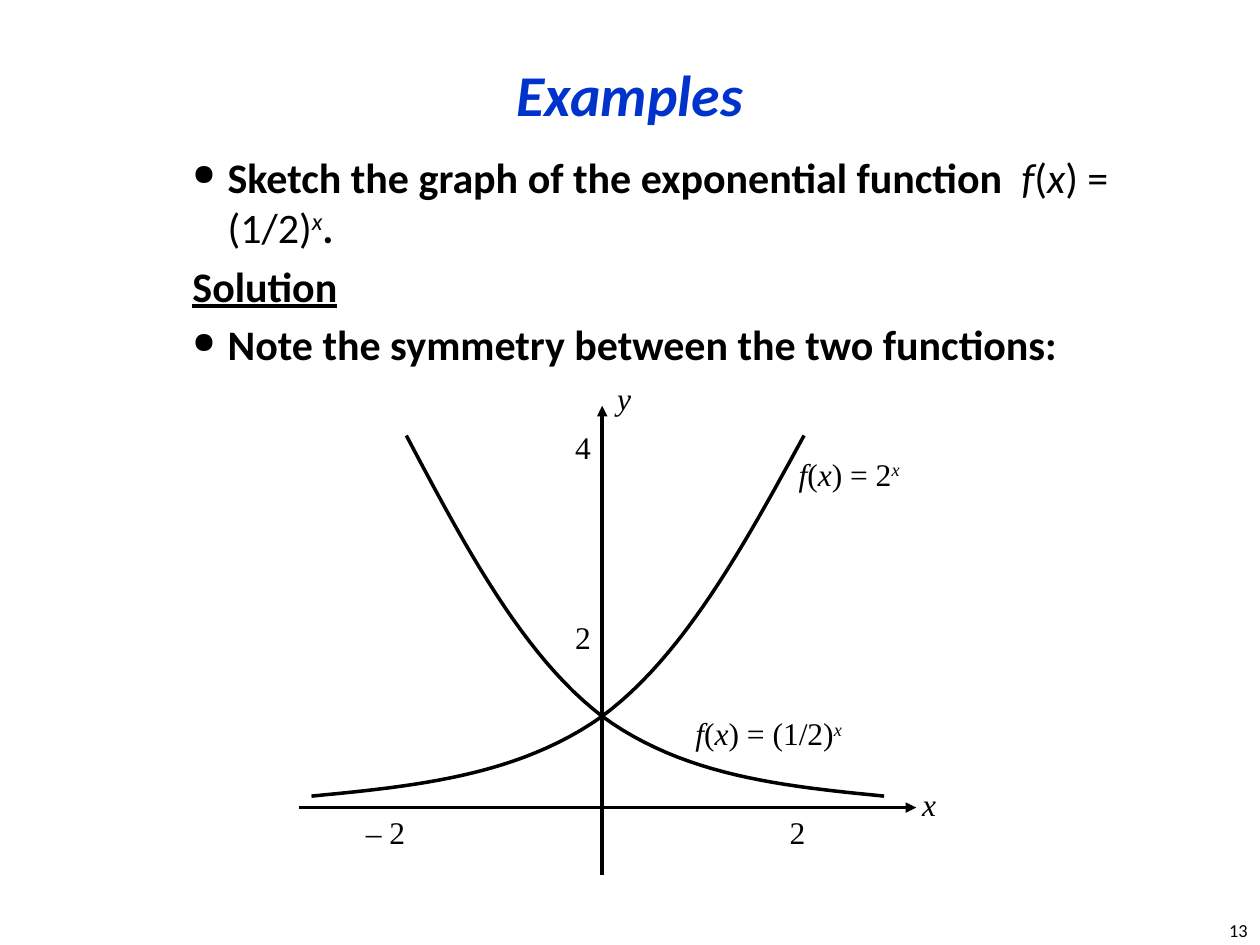
from dataclasses import dataclass

from lxml import etree
from pptx import Presentation
from pptx.dml.color import RGBColor
from pptx.enum.shapes import MSO_CONNECTOR
from pptx.enum.text import MSO_ANCHOR, MSO_AUTO_SIZE, PP_ALIGN
from pptx.oxml.ns import qn
from pptx.util import Cm, Pt

STRAIGHT = MSO_CONNECTOR.STRAIGHT
MIDDLE = MSO_ANCHOR.MIDDLE
GROW = MSO_AUTO_SIZE.SHAPE_TO_FIT_TEXT
LEFT, CENTER, RIGHT = PP_ALIGN.LEFT, PP_ALIGN.CENTER, PP_ALIGN.RIGHT


@dataclass(frozen=True)
class Theme:
    """Colours, fonts and sizes of the slide."""
    title_color: RGBColor = RGBColor(0x00, 0x33, 0xCC)
    ink: RGBColor = RGBColor(0, 0, 0)
    text_font: str = "Calibri"
    math_font: str = "Times New Roman"
    title_size: float = 33
    body_size: float = 24
    graph_size: float = 18
    number_size: float = 10.5
    stroke: float = 2


THEME = Theme()
FUNCTION_OF_X = [("f", "i"), ("(", ""), ("x", "i")]
HALF_POWER = FUNCTION_OF_X + [(") = (1/2)", ""), ("x", "i^")]
TWO_POWER = FUNCTION_OF_X + [(") = 2", ""), ("x", "i^")]
STATEMENTS = [
    ([("Sketch the graph of the exponential function  ", "b"), *HALF_POWER, (".", "b")], True),
    ([("Solution", "bu")], False),
    ([("Note the symmetry between the two functions:", "b")], True),
]
GROWTH_KNOTS = [(-5.86, 8.53), (-3.78, 8.33), (-1.7, 8.13), (0, 6.92),
                (1.64, 5.71), (2.86, 3.48), (4.07, 1.26)]
MIRROR = -0.97
CURVE_STEPS = 24


def style_font(font, name, size, color):
    """Set the family, size and colour of a font."""
    font.name, font.size = name, Pt(size)
    font.color.rgb = color


def write_runs(paragraph, pieces, name, size):
    """Fill a paragraph with runs marked b, i, u or ^ for superscript."""
    for text, marks in pieces:
        run = paragraph.add_run()
        run.text = text
        style_font(run.font, name, size, THEME.ink)
        run.font.bold, run.font.italic = "b" in marks, "i" in marks
        run.font.underline = "u" in marks
        if "^" in marks:
            run.font._element.set("baseline", "30000")


def add_frame(slide, left, top, width, height):
    """Add a wrapping text box and return its frame."""
    frame = slide.shapes.add_textbox(Cm(left), Cm(top), Cm(width), Cm(height)).text_frame
    frame.word_wrap = True
    return frame


def add_label(slide, left, top, width, pieces):
    """Add a one-line graph label and return its paragraph."""
    frame = add_frame(slide, left, top, width, 1.02)
    frame.auto_size = GROW
    write_runs(frame.paragraphs[0], pieces, THEME.math_font, THEME.graph_size)
    return frame.paragraphs[0]


def add_title(slide, left, top, width, height):
    """Place and format the title placeholder."""
    title = slide.shapes.title
    title.left, title.top, title.width, title.height = map(Cm, (left, top, width, height))
    frame = title.text_frame
    frame.text = "Examples"
    frame.vertical_anchor = MIDDLE
    heading = frame.paragraphs[0]
    heading.alignment = CENTER
    font = heading.runs[0].font
    style_font(font, THEME.text_font, THEME.title_size, THEME.title_color)
    font.bold = font.italic = True


def add_statements(slide, left, top, width, height):
    """Write the task, the solution heading and the note."""
    frame = add_frame(slide, left, top, width, height)
    for index, (pieces, bulleted) in enumerate(STATEMENTS):
        statement = frame.add_paragraph() if index else frame.paragraphs[0]
        properties = statement._p.get_or_add_pPr()
        properties.set("marL", str(Cm(0.71)))
        properties.set("indent", str(-Cm(0.71)))
        if bulleted:
            etree.SubElement(properties, qn("a:buSzPct"), val="70000")
            etree.SubElement(properties, qn("a:buChar"), char="●")
        else:
            etree.SubElement(properties, qn("a:buNone"))
        if index:
            statement.space_before = Pt(0.2 * THEME.body_size)
        write_runs(statement, pieces, THEME.text_font, THEME.body_size)


def add_axis(slide, start, end):
    """Draw an axis with an arrowhead at its end."""
    axis = slide.shapes.add_connector(STRAIGHT, *map(Cm, (*start, *end)))
    axis.line.color.rgb = THEME.ink
    axis.line.width = Pt(THEME.stroke)
    etree.SubElement(axis.line._get_or_add_ln(), qn("a:tailEnd"), type="triangle")
    etree.SubElement(axis._element.spPr, qn("a:effectLst"))


def bezier_point(knots, t):
    """Return the point at t on a cubic Bezier segment."""
    weights = ((1 - t) ** 3, 3 * t * (1 - t) ** 2, 3 * t * t * (1 - t), t ** 3)
    return tuple(sum(w * knot[i] for w, knot in zip(weights, knots)) for i in (0, 1))


def add_curve(slide, knots):
    """Draw a smooth open curve through chained Bezier segments."""
    points = [knots[0]] + [bezier_point(knots[first:first + 4], step / CURVE_STEPS)
                           for first in range(0, len(knots) - 1, 3)
                           for step in range(1, CURVE_STEPS + 1)]
    (start_x, start_y), *rest = [(Cm(x), Cm(y)) for x, y in points]
    builder = slide.shapes.build_freeform(start_x, start_y)
    builder.add_line_segments(rest, close=False)
    curve = builder.convert_to_shape()
    curve.shadow.inherit = False
    curve.fill.background()
    curve.line.color.rgb = THEME.ink
    curve.line.width = Pt(THEME.stroke)


def add_x_ticks(slide, left, top, width):
    """Write the horizontal tick values at centred tab stops."""
    ticks = add_label(slide, left, top, width, [])
    stops = etree.SubElement(ticks._p.get_or_add_pPr(), qn("a:tabLst"))
    for position in (1.04, 4.31):
        etree.SubElement(stops, qn("a:tab"), pos=str(Cm(position * 2.54)), algn="ctr")
    write_runs(ticks, [("\t– 2\t2", "")], THEME.math_font, THEME.graph_size)


def add_y_ticks(slide, left, top, width, height):
    """Write the vertical tick values, widely spaced."""
    frame = add_frame(slide, left, top, width, height)
    upper, lower = frame.paragraphs[0], frame.add_paragraph()
    for tick, value in ((upper, "4"), (lower, "2")):
        tick.alignment = RIGHT
        write_runs(tick, [(value, "")], THEME.math_font, THEME.graph_size)
    lower.line_spacing = 4.6
    lower.space_before = Pt(THEME.graph_size / 2)


def add_graph(slide, left, top, width, height):
    """Draw both exponential curves on labelled axes."""
    origin_x, baseline = left + 7.26, top + 8.76
    add_axis(slide, (origin_x, top + height), (origin_x, top + 0.66))
    add_axis(slide, (left + 1.14, baseline), (left + 13.59, baseline))
    for stretch in (MIRROR, 1):
        add_curve(slide, [(origin_x + stretch * x, top + y) for x, y in GROWTH_KNOTS])
    add_x_ticks(slide, left, top + 8.74, width - 1.65)
    add_y_ticks(slide, left + 6.04, top + 0.99, 1.24, 4.22)
    for x, y, label_width, pieces in (
        (13.46, 8.18, 1.22, [("x", "i")]),
        (7.31, 0, 1.22, [("y", "i")]),
        (8.89, 6.75, 4.29, HALF_POWER),
        (10.97, 1.52, 4.29, TWO_POWER),
    ):
        add_label(slide, left + x, top + y, label_width, pieces).alignment = LEFT


def add_page_number(slide, left, top, width, height):
    """Write the page number at the right edge."""
    number = add_frame(slide, left, top, width, height).paragraphs[0]
    number.alignment = RIGHT
    write_runs(number, [("13", "")], THEME.text_font, THEME.number_size)


def main():
    """Build and save the slide."""
    deck = Presentation()
    deck.slide_width, deck.slide_height = Cm(25.4), Cm(19.05)
    slide = deck.slides.add_slide(deck.slide_layouts[5])
    add_title(slide, 1.27, 0, 22.86, 3.76)
    add_statements(slide, 3.63, 2.92, 20.27, 14.27)
    add_graph(slide, 4.88, 7.52, 15.26, 10.11)
    add_page_number(slide, 20.12, 18.41, 5.28, 0.64)
    deck.save("out.pptx")


if __name__ == "__main__":
    main()
